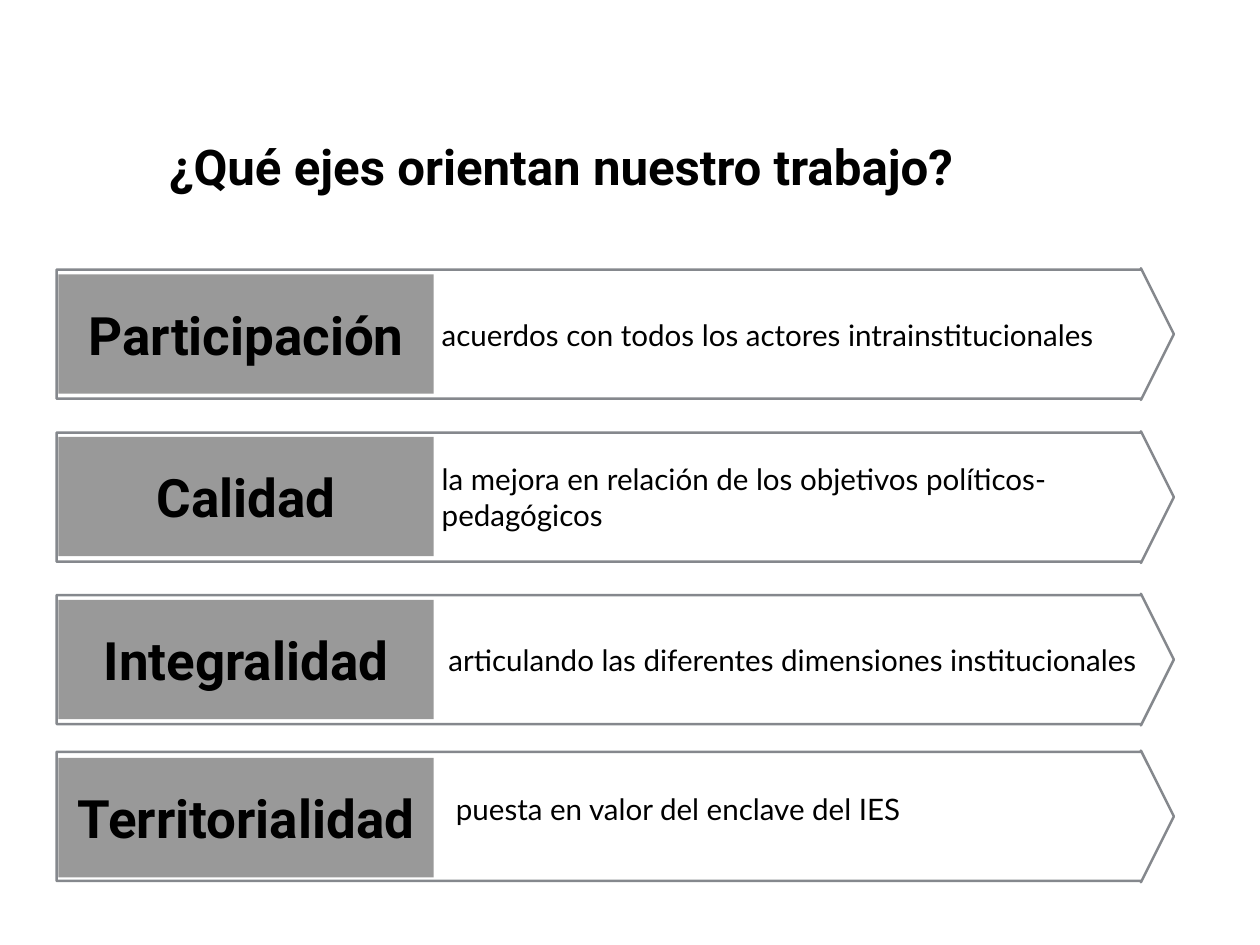
import dataclasses

import pptx
import pptx.dml.color
import pptx.enum.shapes
import pptx.enum.text
import pptx.util

Pt = pptx.util.Pt
SHAPE = pptx.enum.shapes.MSO_SHAPE
ALIGN = pptx.enum.text.PP_ALIGN
MIDDLE = pptx.enum.text.MSO_ANCHOR.MIDDLE


@dataclasses.dataclass(frozen=True)
class Theme:
    ink: str = "000000"
    label_fill: str = "999999"
    outline: str = "85888D"
    heading_font: str = "Roboto"
    body_font: str = "Lato"
    title_size: int = 40
    label_size: int = 43
    body_size: int = 24
    line_width: int = 2


def rgb(code):
    return pptx.dml.color.RGBColor.from_string(code)


def write(shape, text, *, font, size, color, bold=False, align=ALIGN.LEFT, inset=6):
    tf = shape.text_frame
    tf.word_wrap = True
    tf.auto_size = pptx.enum.text.MSO_AUTO_SIZE.NONE
    tf.vertical_anchor = MIDDLE
    tf.margin_left = tf.margin_right = tf.margin_top = tf.margin_bottom = Pt(inset)
    p = tf.paragraphs[0]
    p.alignment = align
    r = p.add_run()
    r.text = text
    r.font.name = font
    r.font.size = Pt(size)
    r.font.bold = bold
    r.font.color.rgb = rgb(color)


class SlideBuilder:
    def __init__(self, s, theme):
        self.s = s
        self.theme = theme

    def title(self, text, *box):
        sp = self.s.shapes.title
        sp.left, sp.top, sp.width, sp.height = map(Pt, box)
        t = self.theme
        write(sp, text, font=t.heading_font, size=t.title_size, color=t.ink,
              bold=True, align=ALIGN.CENTER, inset=0)

    def arrow(self, *box):
        sp = self.s.shapes.add_shape(SHAPE.RIGHT_ARROW, *map(Pt, box))
        sp.adjustments[0], sp.adjustments[1] = 0.98, 0.25
        sp.shadow.inherit = False
        sp.fill.background()
        sp.line.color.rgb = rgb(self.theme.outline)
        sp.line.width = Pt(self.theme.line_width)

    def label(self, text, *box):
        sp = self.s.shapes.add_shape(SHAPE.RECTANGLE, *map(Pt, box))
        sp.shadow.inherit = False
        t = self.theme
        sp.fill.solid()
        sp.fill.fore_color.rgb = rgb(t.label_fill)
        sp.line.fill.background()
        write(sp, text, font=t.heading_font, size=t.label_size, color=t.ink,
              bold=True, align=ALIGN.CENTER)

    def description(self, text, *box):
        sp = self.s.shapes.add_textbox(*map(Pt, box))
        t = self.theme
        write(sp, text, font=t.body_font, size=t.body_size, color=t.ink)


# Axis, description, arrow top, label top, description left and top
AXES = [
    ("Participación", "acuerdos con todos los actores intrainstitucionales",
     218, 223, 353, 235),
    ("Calidad", "la mejora en relación de los objetivos políticos-pedagógicos",
     350.5, 355, 353, 366.5),
    ("Integralidad", "articulando las diferentes dimensiones institucionales",
     482.5, 487.5, 358.5, 499),
    ("Territorialidad", "puesta en valor del enclave del IES",
     610, 616, 364.5, 620.5),
]
DESCRIPTION_RIGHT = 945


def main():
    prs = pptx.Presentation()
    prs.slide_width, prs.slide_height = Pt(1024), Pt(768)
    s = prs.slides.add_slide(prs.slide_layouts[5])
    builder = SlideBuilder(s, Theme())
    builder.title("¿Qué ejes orientan nuestro trabajo?", 30, 104, 852, 62)
    for axis, text, arrow_top, label_top, text_left, text_top in AXES:
        builder.arrow(46, arrow_top, 908, 107)
        builder.label(axis, 47.5, label_top, 305, 97)
        builder.description(text, text_left, text_top,
                            DESCRIPTION_RIGHT - text_left, 74)
    prs.save("out.pptx")


if __name__ == "__main__":
    main()
